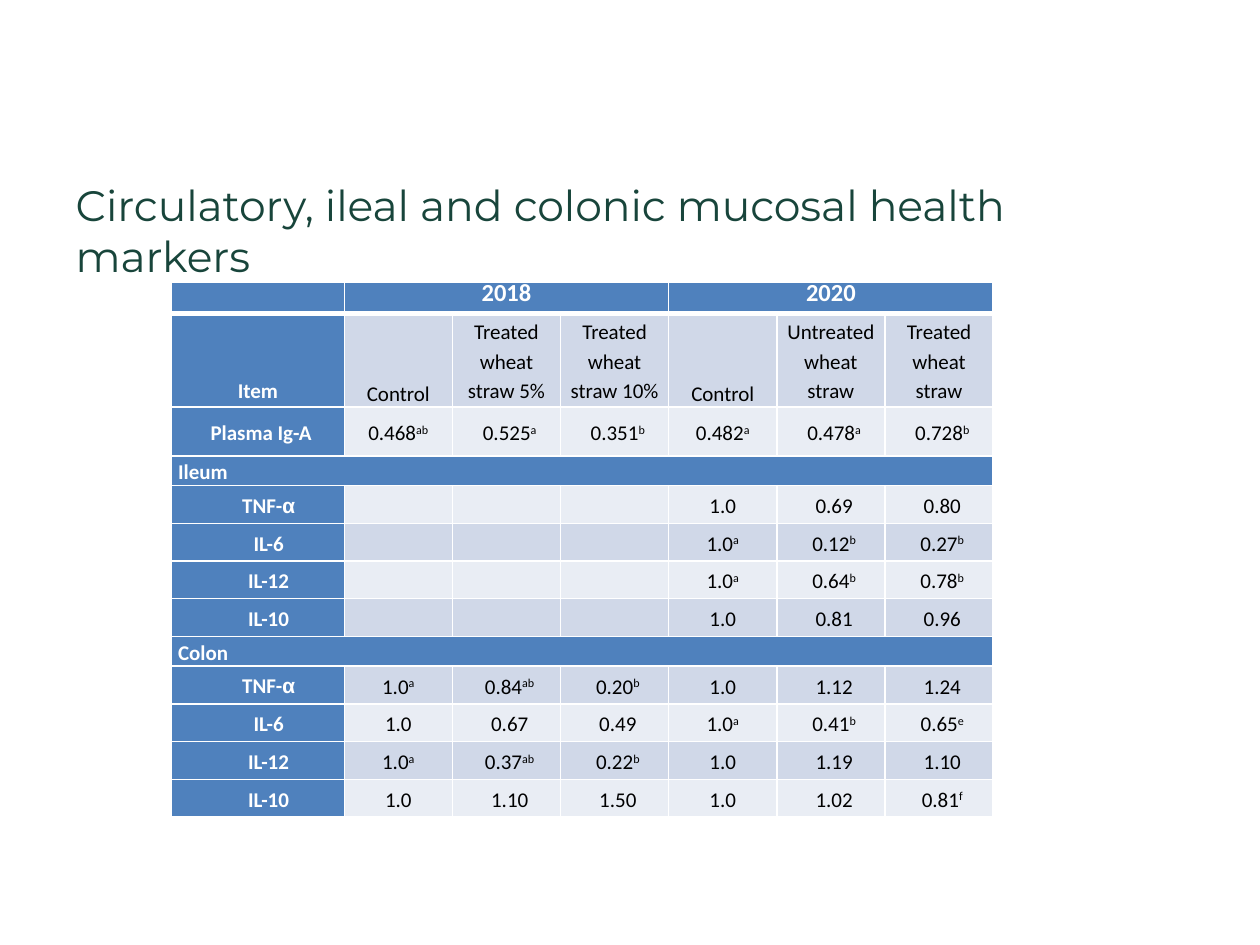
from typing import NamedTuple

from lxml import etree
from pptx import Presentation
from pptx.dml.color import RGBColor
from pptx.enum import text
from pptx.oxml import ns
from pptx.util import Cm, Pt

GREEN = RGBColor(0x18, 0x45, 0x3B)
BLUE = RGBColor(0x4F, 0x81, 0xBD)
BANDS = (RGBColor(0xE9, 0xED, 0xF4), RGBColor(0xD0, 0xD8, 0xE8))
WHITE = RGBColor(0xFF, 0xFF, 0xFF)
BLACK = RGBColor(0, 0, 0)

CENTER, LEFT = text.PP_ALIGN.CENTER, text.PP_ALIGN.LEFT
MIDDLE, BOTTOM = text.MSO_ANCHOR.MIDDLE, text.MSO_ANCHOR.BOTTOM
FLUSH = (0, 0, 0, 0)
INSET = (0.13, 0, 0, 0)
PADDED = (0.13, 0.05, 0.13, 0.05)


class Marker(NamedTuple):
    """A row of the table; a caret in a value starts its superscript."""
    label: str
    values: tuple[str, ...] = ()
    height: float = 0.76
    indent: float = 0.3


class Style(NamedTuple):
    color: RGBColor
    bold: bool = False
    size: float = 12
    align: text.PP_ALIGN = CENTER
    anchor: text.MSO_ANCHOR = MIDDLE
    insets: tuple[float, ...] = INSET
    indent: float = 0
    spacing: float | Pt = 1.15
    after: float = 10


YEARS = ("2018", "2020")
GROUP = 3
TREATMENTS = ("Control", "Treated wheat straw 5%", "Treated wheat straw 10%",
              "Control", "Untreated wheat straw", "Treated wheat straw")
EMPTY = ("",) * GROUP
MARKERS = (
    Marker("Plasma Ig-A", ("0.468^ab", "0.525^a", "0.351^b", "0.482^a", "0.478^a", "0.728^b"), 0.99, 0),
    Marker("Ileum", height=0.6),
    Marker("TNF-α", (*EMPTY, "1.0", "0.69", "0.80")),
    Marker("IL-6", (*EMPTY, "1.0^a", "0.12^b", "0.27^b")),
    Marker("IL-12", (*EMPTY, "1.0^a", "0.64^b", "0.78^b")),
    Marker("IL-10", (*EMPTY, "1.0", "0.81", "0.96")),
    Marker("Colon", height=0.6),
    Marker("TNF-α", ("1.0^a", "0.84^ab", "0.20^b", "1.0", "1.12", "1.24")),
    Marker("IL-6", ("1.0", "0.67", "0.49", "1.0^a", "0.41^b", "0.65^e")),
    Marker("IL-12", ("1.0^a", "0.37^ab", "0.22^b", "1.0", "1.19", "1.10")),
    Marker("IL-10", ("1.0", "1.10", "1.50", "1.0", "1.02", "0.81^f")),
)
COLUMN_WIDTHS = (3.48,) + (2.18,) * len(TREATMENTS)
ROW_HEIGHTS = (0.63, 1.88) + tuple(m.height for m in MARKERS)


def set_borders(cell, top: float, bottom: float) -> None:
    tc_pr = cell._tc.get_or_add_tcPr()
    for side, width in (("L", 1), ("R", 1), ("T", top), ("B", bottom)):
        ln = etree.SubElement(tc_pr, ns.qn(f"a:ln{side}"), w=str(Pt(width)))
        fill = etree.SubElement(ln, ns.qn("a:solidFill"))
        etree.SubElement(fill, ns.qn("a:srgbClr"), val=str(WHITE))


def write_cell(cell, content: str, style: Style) -> None:
    cell.vertical_anchor = style.anchor
    (cell.margin_left, cell.margin_top,
     cell.margin_right, cell.margin_bottom) = map(Cm, style.insets)
    p = cell.text_frame.paragraphs[0]
    p.alignment, p.line_spacing, p.space_after = style.align, style.spacing, Pt(style.after)
    if style.indent:
        p._p.get_or_add_pPr().set("marL", str(Cm(style.indent)))
    p.font.name, p.font.size = "Calibri", Pt(style.size)
    p.font.bold, p.font.color.rgb = style.bold, style.color

    base, _, superscript = content.partition("^")
    stem, alpha, _ = base.partition("α")
    if stem:
        p.add_run().text = stem
    if alpha:
        r = p.add_run()
        r.text, r.font.name = alpha, "Courier New"
    if superscript:
        r = p.add_run()
        r.text = superscript
        r._r.get_or_add_rPr().set("baseline", "30000")


def add_title(slide, title: str) -> None:
    sp = slide.shapes.title
    sp.left, sp.top, sp.width, sp.height = Cm(1.27), Cm(3.48), Cm(22.86), Cm(1.35)
    tf = sp.text_frame
    tf.text, tf.word_wrap, tf.vertical_anchor = title, True, text.MSO_ANCHOR.TOP
    p = tf.paragraphs[0]
    p.alignment = LEFT
    p.font.name, p.font.size, p.font.color.rgb = "Montserrat", Pt(24.3), GREEN


def add_marker_table(slide) -> None:
    table = slide.shapes.add_table(
        len(ROW_HEIGHTS), len(COLUMN_WIDTHS), Cm(3.46), Cm(5.69),
        Cm(sum(COLUMN_WIDTHS)), Cm(sum(ROW_HEIGHTS))).table
    table.first_row = table.horz_banding = False
    for column, width in zip(table.columns, COLUMN_WIDTHS):
        column.width = Cm(width)
    for i, (row, height) in enumerate(zip(table.rows, ROW_HEIGHTS)):
        row.height = Cm(height)
        is_section = i > 1 and not MARKERS[i - 2].values
        for j, cell in enumerate(row.cells):
            set_borders(cell, top=3 if i == 1 else 1, bottom=3 if i == 0 else 1)
            cell.fill.solid()
            is_header = i == 0 or j == 0 or is_section
            cell.fill.fore_color.rgb = BLUE if is_header else BANDS[i % 2]

    last = len(TREATMENTS)
    label = Style(WHITE, bold=True)
    year_style = label._replace(size=14, insets=FLUSH, spacing=Pt(11.6), after=0)
    write_cell(table.cell(0, 0), "", label._replace(insets=FLUSH))
    for k, year in enumerate(YEARS):
        first = 1 + k * GROUP
        table.cell(0, first).merge(table.cell(0, first + GROUP - 1))
        write_cell(table.cell(0, first), year, year_style)

    heading = Style(BLACK, anchor=BOTTOM, insets=PADDED, after=0)
    write_cell(table.cell(1, 0), "Item", heading._replace(color=WHITE, bold=True))
    for j, treatment in enumerate(TREATMENTS, 1):
        insets = FLUSH if treatment == "Control" else PADDED
        write_cell(table.cell(1, j), treatment, heading._replace(insets=insets))

    for i, marker in enumerate(MARKERS, 2):
        if marker.values:
            write_cell(table.cell(i, 0), marker.label, label._replace(indent=marker.indent))
        else:
            table.cell(i, 0).merge(table.cell(i, last))
            write_cell(table.cell(i, 0), marker.label, label._replace(align=LEFT))
        for j, value in enumerate(marker.values, 1):
            insets = FLUSH if TREATMENTS[j - 1] == "Control" else INSET
            write_cell(table.cell(i, j), value, Style(BLACK, insets=insets))


def main() -> None:
    prs = Presentation()
    prs.slide_width, prs.slide_height = Cm(25.4), Cm(19.05)
    slide = prs.slides.add_slide(prs.slide_layouts[5])
    add_title(slide, "Circulatory, ileal and colonic mucosal health markers")
    add_marker_table(slide)
    prs.save("out.pptx")


if __name__ == "__main__":
    main()
